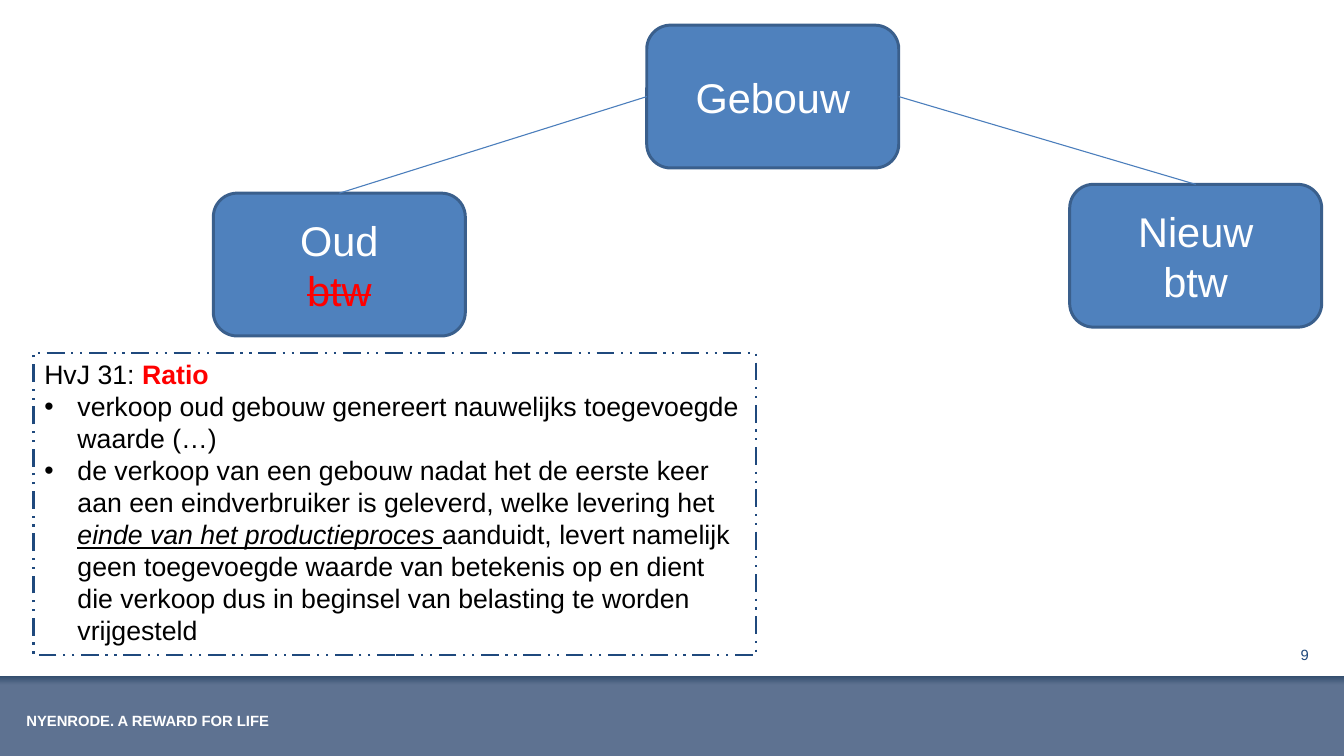
"""Build the slide on VAT for old and new buildings."""
from dataclasses import dataclass

from lxml.etree import SubElement
from pptx import Presentation
from pptx.dml.color import RGBColor
from pptx.enum.dml import MSO_LINE
from pptx.enum.shapes import MSO_CONNECTOR, MSO_SHAPE
from pptx.enum.text import MSO_ANCHOR, MSO_AUTO_SIZE, PP_ALIGN
from pptx.oxml.ns import qn
from pptx.util import Cm, Pt

WHITE = RGBColor(0xFF, 0xFF, 0xFF)
BLACK = RGBColor(0, 0, 0)
RED = RGBColor(0xFF, 0, 0)
NAVY = RGBColor(0x1F, 0x49, 0x7D)
BOX_FILL = RGBColor(0x4F, 0x81, 0xBD)
BOX_LINE = RGBColor(0x3A, 0x5F, 0x8C)
LINK = RGBColor(0x4B, 0x7E, 0xBC)
BAND_TOP = RGBColor(0x34, 0x4E, 0x6E)
BAND = RGBColor(0x5E, 0x72, 0x91)

FONT = "Arial"
BOX_WIDTH, BOX_HEIGHT = 6, 3.4
TOP, LEFT, RIGHT = 0, 1, 3
INDENT = Cm(0.79)


@dataclass
class Span:
    text: str
    color: RGBColor
    bold: bool = False
    italic: bool = False
    underline: bool = False
    strike: bool = False


@dataclass
class Para:
    spans: list[Span]
    bullet: bool = False


@dataclass
class Node:
    left: float
    top: float
    paras: list[Para]


@dataclass
class Label:
    area: tuple[float, float, float, float]
    span: Span
    align: PP_ALIGN
    anchor: MSO_ANCHOR


@dataclass
class Link:
    start: str
    start_side: int
    end: str
    end_side: int


NODES = {
    "gebouw": Node(15.4, 0.6, [Para([Span("Gebouw", WHITE)])]),
    "oud": Node(5.08, 4.6, [Para([Span("Oud", WHITE)]),
                            Para([Span("btw", RED, strike=True)])]),
    "nieuw": Node(25.47, 4.39, [Para([Span("Nieuw", WHITE)]),
                                Para([Span("btw", WHITE)])]),
}
LINKS = [
    Link("oud", TOP, "gebouw", LEFT),
    Link("gebouw", RIGHT, "nieuw", TOP),
]
LABELS = [
    Label((0.38, 16.81, 11.84, 0.69),
          Span("NYENRODE. A REWARD FOR LIFE", WHITE, bold=True),
          PP_ALIGN.LEFT, MSO_ANCHOR.TOP),
    Label((30.25, 15.24, 1.63, 0.69), Span("9", NAVY),
          PP_ALIGN.CENTER, MSO_ANCHOR.MIDDLE),
]
RATIO = [
    Para([Span("HvJ 31: ", BLACK), Span("Ratio", RED, bold=True)]),
    Para([Span("verkoop oud gebouw genereert nauwelijks toegevoegde waarde (…)",
               BLACK)], bullet=True),
    Para([
        Span("de verkoop van een gebouw nadat het de eerste keer aan een "
             "eindverbruiker is geleverd, welke levering het ", BLACK),
        Span("einde van het productieproces ", BLACK, italic=True, underline=True),
        Span("aanduidt, levert namelijk geen toegevoegde waarde van betekenis op "
             "en dient die verkoop dus in beginsel van belasting te worden "
             "vrijgesteld", BLACK),
    ], bullet=True),
]


def set_bullet(paragraph, bullet: bool) -> None:
    properties = paragraph._p.get_or_add_pPr()
    properties.set("marL", str(INDENT if bullet else 0))
    properties.set("indent", str(-INDENT if bullet else 0))
    if bullet:
        SubElement(properties, qn("a:buFont")).set("typeface", FONT)
        SubElement(properties, qn("a:buChar")).set("char", "•")
    else:
        SubElement(properties, qn("a:buNone"))


def write(frame, paras: list[Para], size: float, align: PP_ALIGN) -> None:
    frame.word_wrap = True
    for index, para in enumerate(paras):
        paragraph = frame.add_paragraph() if index else frame.paragraphs[0]
        paragraph.alignment = align
        paragraph.space_before = Pt(0)
        set_bullet(paragraph, para.bullet)
        for span in para.spans:
            run = paragraph.add_run()
            run.text = span.text
            font = run.font
            font.name, font.size = FONT, Pt(size)
            font.bold, font.italic = span.bold, span.italic
            font.underline = span.underline
            font.color.rgb = span.color
            if span.strike:
                run._r.get_or_add_rPr().set("strike", "sngStrike")


def draw_band(page) -> None:
    band = page.shapes.add_shape(MSO_SHAPE.RECTANGLE, 0, Cm(16.1), Cm(32), Cm(1.9))
    band.shadow.inherit = False
    band.line.fill.background()
    band.fill.gradient()
    band.fill.gradient_angle = 270
    stops = zip(band.fill.gradient_stops, (BAND_TOP, BAND), (0, 0.11))
    for stop, color, position in stops:
        stop.color.rgb = color
        stop.position = position


def draw_label(page, label: Label) -> None:
    box = page.shapes.add_textbox(*map(Cm, label.area))
    box.text_frame.vertical_anchor = label.anchor
    write(box.text_frame, [Para([label.span])], 10, label.align)


def draw_node(page, node: Node):
    box = page.shapes.add_shape(MSO_SHAPE.ROUNDED_RECTANGLE, Cm(node.left),
                                Cm(node.top), Cm(BOX_WIDTH), Cm(BOX_HEIGHT))
    box.shadow.inherit = False
    box.fill.solid()
    box.fill.fore_color.rgb = BOX_FILL
    box.line.color.rgb = BOX_LINE
    box.line.width = Pt(2)
    box.text_frame.vertical_anchor = MSO_ANCHOR.MIDDLE
    write(box.text_frame, node.paras, 28, PP_ALIGN.CENTER)
    return box


def draw_link(page, link: Link, boxes: dict) -> None:
    connector = page.shapes.add_connector(MSO_CONNECTOR.STRAIGHT, 0, 0, 0, 0)
    connector.begin_connect(boxes[link.start], link.start_side)
    connector.end_connect(boxes[link.end], link.end_side)
    connector.line.color.rgb = LINK
    connector.line.width = Pt(0.75)
    SubElement(connector._element.spPr, qn("a:effectLst"))


def fill_ratio(body) -> None:
    body.left, body.top, body.width, body.height = map(Cm, (0.8, 8.4, 17.2, 7.2))
    body.line.color.rgb = NAVY
    body.line.width = Pt(1.5)
    body.line.dash_style = MSO_LINE.DASH_DOT_DOT
    body.text_frame.auto_size = MSO_AUTO_SIZE.NONE
    body.text_frame.vertical_anchor = MSO_ANCHOR.TOP
    write(body.text_frame, RATIO, 18, PP_ALIGN.LEFT)


def main() -> None:
    deck = Presentation()
    deck.slide_width, deck.slide_height = Cm(32), Cm(18)
    page = deck.slides.add_slide(deck.slide_layouts[1])
    title = page.shapes.title._element
    title.getparent().remove(title)
    fill_ratio(page.placeholders[1])
    draw_band(page)
    for label in LABELS:
        draw_label(page, label)
    boxes = {name: draw_node(page, node) for name, node in NODES.items()}
    for link in LINKS:
        draw_link(page, link, boxes)
    deck.save("out.pptx")


if __name__ == "__main__":
    main()
